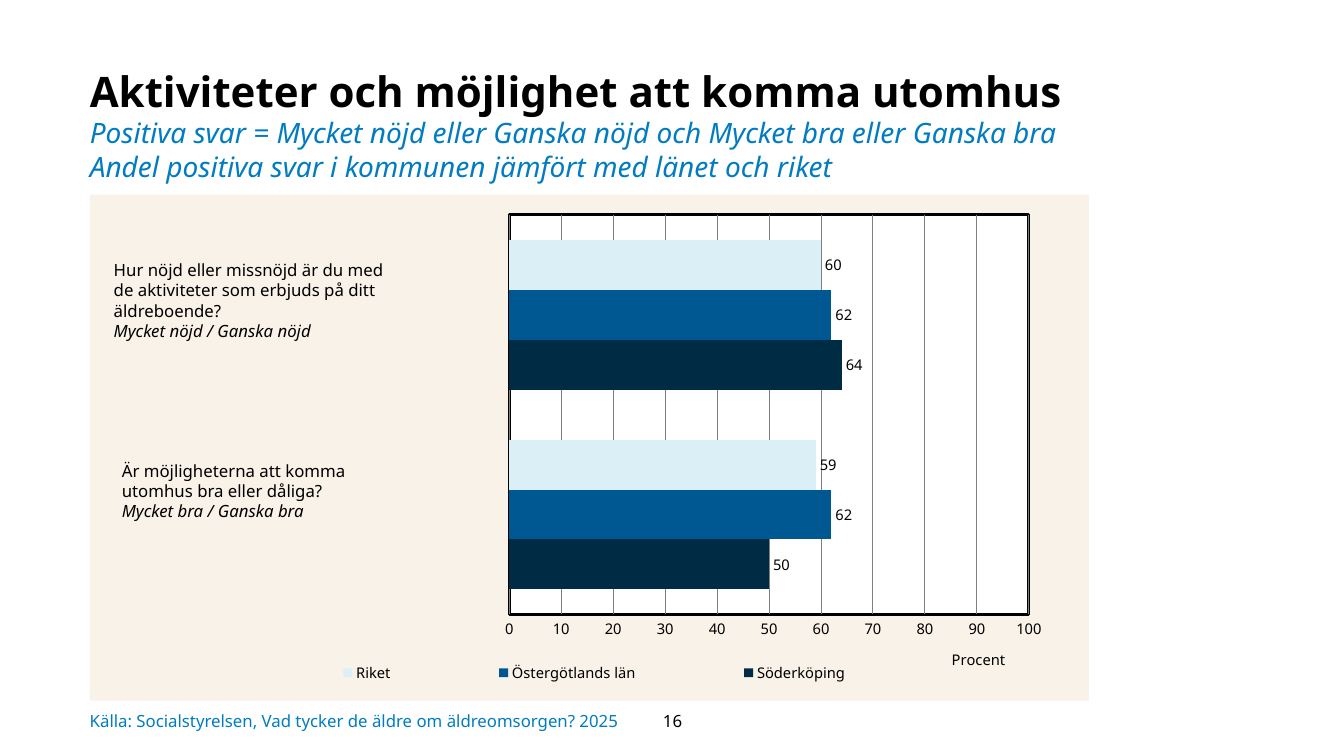
from lxml import etree
from pptx import Presentation
from pptx.chart.data import CategoryChartData
from pptx.dml.color import RGBColor
from pptx.enum.chart import (XL_CHART_TYPE, XL_LABEL_POSITION,
                             XL_LEGEND_POSITION, XL_TICK_MARK)
from pptx.enum.text import MSO_ANCHOR, PP_ALIGN
from pptx.oxml import parse_xml
from pptx.oxml.ns import qn
from pptx.util import Inches, Pt

BAR = XL_CHART_TYPE.BAR_CLUSTERED
OUTSIDE = XL_LABEL_POSITION.OUTSIDE_END
BOTTOM = XL_LEGEND_POSITION.BOTTOM
NO_TICK = XL_TICK_MARK.NONE
TOP, MIDDLE = MSO_ANCHOR.TOP, MSO_ANCHOR.MIDDLE
LEFT, CENTER = PP_ALIGN.LEFT, PP_ALIGN.CENTER

FONT = "Noto Sans"
BLACK = RGBColor(0x00, 0x00, 0x00)
WHITE = RGBColor(0xFF, 0xFF, 0xFF)
GRAY = RGBColor(0x80, 0x80, 0x80)
CREAM = RGBColor(0xF8, 0xF2, 0xE8)
NAVY = RGBColor(0x00, 0x2B, 0x45)
BLUE = RGBColor(0x00, 0x58, 0x92)
PALE = RGBColor(0xDB, 0xF0, 0xF6)
SKY = RGBColor(0x01, 0x7C, 0xC1)
CHART_NS = "http://schemas.openxmlformats.org/drawingml/2006/chart"


def add_run(para, text, size, color=BLACK, bold=False, italic=False):
    run = para.add_run()
    run.text = text
    font = run.font
    font.name, font.size = FONT, Pt(size)
    font.bold, font.italic = bold, italic
    font.color.rgb = color


def make_layout(x, y, w=None, h=None, inner=False):
    layout = etree.Element(qn("c:layout"), nsmap={"c": CHART_NS})
    manual = etree.SubElement(layout, qn("c:manualLayout"))
    parts = [("xMode", "edge"), ("yMode", "edge"),
             ("x", x), ("y", y), ("w", w), ("h", h)]
    if inner:
        parts.insert(0, ("layoutTarget", "inner"))
    for tag, val in parts:
        if val is not None:
            etree.SubElement(manual, qn("c:" + tag)).set("val", str(val))
    return parse_xml(etree.tostring(layout))


prs = Presentation()
prs.slide_width, prs.slide_height = Inches(13.33), Inches(7.5)
slide = prs.slides.add_slide(prs.slide_layouts[5])

# Title
title = slide.shapes.title
title.left, title.top = Inches(0.89), Inches(0.65)
title.width, title.height = Inches(10.17), Inches(1.29)
frame = title.text_frame
frame.word_wrap = True
frame.vertical_anchor = TOP
frame.margin_left = frame.margin_top = 0
frame.margin_right, frame.margin_bottom = Inches(0.1), Inches(0.05)
para = frame.paragraphs[0]
para.alignment = LEFT
para.line_spacing = 1.0
add_run(para, "Aktiviteter och möjlighet att komma utomhus", 30, bold=True)
for line in ("Positiva svar = Mycket nöjd eller Ganska nöjd och Mycket bra eller Ganska bra",
             "Andel positiva svar i kommunen jämfört med länet och riket"):
    para.add_line_break()
    add_run(para, line, 20, SKY, italic=True)

# Chart
data = CategoryChartData()
data.categories = ["1", "2"]
series = [("Söderköping", (50, 64), NAVY),
          ("Östergötlands län", (62, 62), BLUE),
          ("Riket", (59, 60), PALE)]
for name, vals, _ in series:
    data.add_series(name, vals)
chart = slide.shapes.add_chart(BAR, Inches(0.89), Inches(1.93),
                               Inches(9.91), Inches(5.02), data).chart
chart.has_title = False
chart.font.name, chart.font.size = FONT, Pt(10.5)
chart.font.color.rgb = BLACK

plot = chart.plots[0]
plot.gap_width, plot.overlap = 100, 0
plot.vary_by_categories = False
for ser, (_, _, color) in zip(plot.series, series):
    ser.format.fill.solid()
    ser.format.fill.fore_color.rgb = color
    labels = ser.data_labels
    labels.show_value = True
    labels.position = OUTSIDE

# Axes
chart.category_axis.visible = False
axis = chart.value_axis
axis.minimum_scale, axis.maximum_scale, axis.major_unit = 0, 100, 10
axis.major_tick_mark = axis.minor_tick_mark = NO_TICK
axis.format.line.fill.background()
axis.major_gridlines.format.line.color.rgb = GRAY
axis.major_gridlines.format.line.width = Pt(0.75)
add_run(axis.axis_title.text_frame.paragraphs[0], "Procent", 10.5)
for old in axis.axis_title._element.findall(qn("c:layout")):
    axis.axis_title._element.remove(old)
axis.axis_title._element.find(qn("c:tx")).addnext(make_layout(0.86, 0.89))

# Legend
chart.has_legend = True
legend = chart.legend
legend.position = BOTTOM
legend.include_in_layout = False
for old in legend._element.findall(qn("c:layout")):
    legend._element.remove(old)
legend._element.find(qn("c:legendPos")).addnext(
    make_layout(0.15, 0.91, 0.71, 0.07))

# Plot and chart backgrounds
area = chart._chartSpace.chart.plotArea
for old in area.findall(qn("c:layout")):
    area.remove(old)
area.insert(0, make_layout(0.42, 0.04, 0.52, 0.79, inner=True))
SHAPE = ('<c:spPr xmlns:c="%s" xmlns:a="http://schemas.openxmlformats.org/'
         'drawingml/2006/main"><a:solidFill><a:srgbClr val="%s"/></a:solidFill>'
         '<a:ln w="%d">%s</a:ln></c:spPr>')
EDGE = f'<a:solidFill><a:srgbClr val="{str(BLACK)}"/></a:solidFill>'
area.append(parse_xml(SHAPE % (CHART_NS, WHITE, Pt(2.25), EDGE)))
chart._chartSpace.chart.addnext(
    parse_xml(SHAPE % (CHART_NS, CREAM, 0, "<a:noFill/>")))

# Questions beside the bars
questions = [
    (1.03, 2.53, 3.0, 1.09, "Hur nöjd eller missnöjd är du med de aktiviteter "
     "som erbjuds på ditt äldreboende?", "Mycket nöjd / Ganska nöjd"),
    (1.11, 4.52, 3.01, 0.88, "Är möjligheterna att komma utomhus bra eller "
     "dåliga?", "Mycket bra / Ganska bra")]
for x, y, w, h, ask, reply in questions:
    box = slide.shapes.add_textbox(Inches(x), Inches(y), Inches(w), Inches(h))
    frame = box.text_frame
    frame.word_wrap = True
    add_run(frame.paragraphs[0], ask, 12)
    add_run(frame.add_paragraph(), reply, 12, italic=True)

# Source and page number
feet = [(0.89, 8.97, "Källa: Socialstyrelsen, Vad tycker de äldre om "
         "äldreomsorgen? 2025", SKY, LEFT),
        (6.16, 1.02, "16", BLACK, CENTER)]
for x, w, text, color, align in feet:
    box = slide.shapes.add_textbox(Inches(x), Inches(6.95), Inches(w), Inches(0.4))
    frame = box.text_frame
    frame.word_wrap = True
    frame.vertical_anchor = MIDDLE
    frame.margin_left = frame.margin_right = 0
    frame.margin_top = frame.margin_bottom = 0
    frame.paragraphs[0].alignment = align
    add_run(frame.paragraphs[0], text, 12, color)

prs.save("out.pptx")
